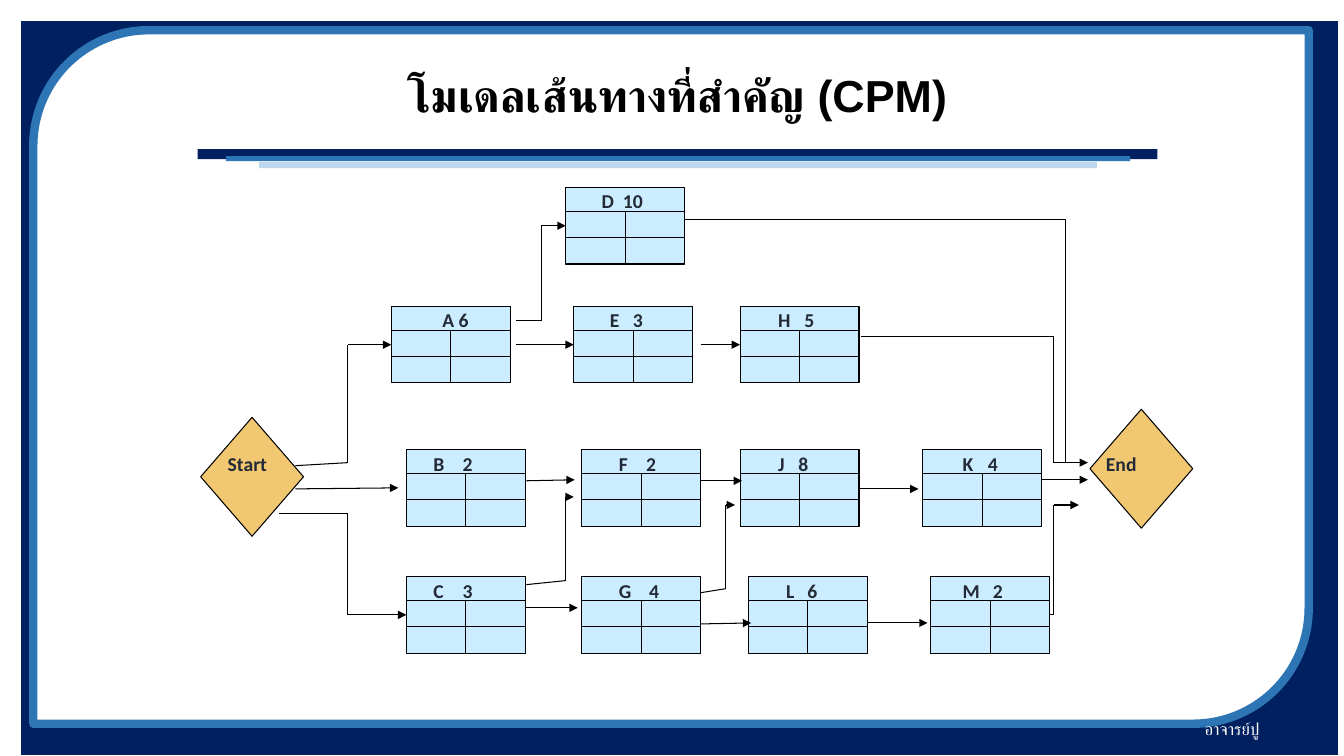
from dataclasses import dataclass
from itertools import pairwise

from lxml import etree
from pptx import Presentation
from pptx.dml.color import RGBColor
from pptx.enum.shapes import MSO_CONNECTOR, MSO_SHAPE
from pptx.enum.text import MSO_ANCHOR, MSO_AUTO_SIZE, PP_ALIGN
from pptx.oxml.ns import qn
from pptx.util import Pt

PX = 9144
RECTANGLE = MSO_SHAPE.RECTANGLE
DIAMOND = MSO_SHAPE.DIAMOND
PANEL = MSO_SHAPE.ROUND_2_DIAG_RECTANGLE
STRAIGHT = MSO_CONNECTOR.STRAIGHT
MIDDLE = MSO_ANCHOR.MIDDLE
CENTER = PP_ALIGN.CENTER
FIT_TEXT = MSO_AUTO_SIZE.SHAPE_TO_FIT_TEXT
LEFT_SIDE, BOTTOM_SIDE, RIGHT_SIDE = 1, 2, 3
TITLE_ONLY = 5
NODE_WIDTH, NODE_HEIGHT = 118, 76
HEADER_HEIGHT, ROW_LINE = 24, 50


@dataclass(frozen=True)
class Theme:
    navy: str = "002060"
    blue: str = "2E75B6"
    pale_blue: str = "BDD7EE"
    white: str = "FFFFFF"
    black: str = "000000"
    label: str = "222A35"
    node: str = "CCECFF"
    terminal: str = "F2C772"
    title_font: str = "Arial"
    body_font: str = "Calibri"
    title_size: int = 32
    label_size: int = 14
    footer_size: int = 12
    thin: float = 0.75
    frame: float = 6


THEME = Theme()


@dataclass(frozen=True)
class Box:
    left: int
    top: int
    width: int
    height: int

    def emu(self):
        return [value * PX for value in (self.left, self.top, self.width, self.height)]


@dataclass(frozen=True)
class Activity:
    name: str
    duration: int
    left: int
    top: int
    label_left: int
    duration_offset: int


@dataclass(frozen=True)
class Terminal:
    text: str
    diamond: Box
    label: Box


@dataclass(frozen=True)
class Route:
    points: tuple
    arrow: bool = True
    source: str = ""
    target: str = ""


BANDS = (
    (Box(196, 148, 952, 10), THEME.navy),
    (Box(224, 155, 897, 5), THEME.blue),
    (Box(257, 161, 831, 6), THEME.pale_blue),
)
ACTIVITIES = (
    Activity("A", 6, 388, 304, 429, 16),
    Activity("B", 2, 403, 446, 420, 29),
    Activity("C", 3, 403, 572, 420, 29),
    Activity("D", 10, 561, 186, 587, 21),
    Activity("E", 3, 569, 304, 595, 23),
    Activity("F", 2, 577, 446, 604, 27),
    Activity("G", 4, 577, 572, 604, 30),
    Activity("H", 5, 734, 304, 762, 26),
    Activity("J", 8, 734, 446, 762, 20),
    Activity("K", 4, 915, 446, 945, 25),
    Activity("L", 6, 742, 572, 770, 21),
    Activity("M", 2, 923, 572, 945, 30),
)
TERMINALS = (
    Terminal("Start", Box(199, 414, 102, 118), Box(216, 443, 75, 34)),
    Terminal("End", Box(1081, 406, 102, 118), Box(1087, 443, 61, 34)),
)
ROUTES = (
    Route(((293, 462), (345, 459), (345, 342), (388, 342)), target="A"),
    Route(((293, 485), (395, 484))),
    Route(((277, 509), (345, 509), (345, 610), (403, 610)), target="C"),
    Route(((512, 318), (537, 318), (537, 224), (561, 224)), target="D"),
    Route(((512, 342), (569, 342)), target="E"),
    Route(((522, 477), (570, 476))),
    Route(((522, 580), (561, 576), (561, 493), (569, 493))),
    Route(((522, 603), (573, 603))),
    Route(((695, 342), (734, 342)), target="H"),
    Route(((695, 477), (736, 477))),
    Route(((695, 588), (720, 584), (720, 501), (729, 501))),
    Route(((695, 619), (745, 618))),
    Route(((852, 485), (911, 485))),
    Route(((860, 618), (920, 618))),
    Route(((1033, 476), (1079, 476))),
    Route(((1041, 610), (1045, 610), (1045, 501), (1070, 501)), source="M"),
    Route(((854, 334), (1045, 334), (1045, 459), (1079, 459))),
    Route(((679, 218), (1057, 218), (1057, 459)), arrow=False),
)


def color(value: str) -> RGBColor:
    return RGBColor.from_string(value)


def add_shape(shapes, kind, box: Box, fill: str, line: str = "", width: float = THEME.thin):
    shape = shapes.add_shape(kind, *box.emu())
    shape.shadow.inherit = False
    shape.fill.solid()
    shape.fill.fore_color.rgb = color(fill)
    if line:
        shape.line.color.rgb = color(line)
        shape.line.width = Pt(width)
    else:
        shape.line.fill.background()
    return shape


def add_line(shapes, start: tuple, end: tuple, arrow: bool = False):
    connector = shapes.add_connector(STRAIGHT, *(value * PX for value in start + end))
    connector.line.color.rgb = color(THEME.black)
    connector.line.width = Pt(THEME.thin)
    if arrow:
        etree.SubElement(connector.line._get_or_add_ln(), qn("a:tailEnd"), type="triangle")
    etree.SubElement(connector._element.spPr, qn("a:effectLst"))
    return connector


def add_run(paragraph, text: str, font: str, size: int, ink: str, bold: bool = True) -> None:
    run = paragraph.add_run()
    run.text = text
    run.font.name = font
    run.font.size = Pt(size)
    run.font.bold = bold
    run.font.color.rgb = color(ink)


def add_text_box(shapes, box: Box, wrap: bool = True):
    frame = shapes.add_textbox(*box.emu()).text_frame
    frame.word_wrap = wrap
    frame.auto_size = FIT_TEXT
    return frame.paragraphs[0]


def add_activity(shapes, activity: Activity):
    left, top = activity.left, activity.top
    right, bottom, middle = left + NODE_WIDTH, top + NODE_HEIGHT, left + NODE_WIDTH // 2
    parts = shapes.add_group_shape().shapes
    box = Box(left, top, NODE_WIDTH, NODE_HEIGHT)
    rectangle = add_shape(parts, RECTANGLE, box, THEME.node, THEME.black)
    divider = add_line(parts, (middle, top + HEADER_HEIGHT), (middle, bottom))
    divider.end_connect(rectangle, BOTTOM_SIDE)
    for offset in (HEADER_HEIGHT, ROW_LINE):
        add_line(parts, (left, top + offset), (right, top + offset))
    return rectangle


def add_activity_label(shapes, activity: Activity) -> None:
    paragraph = add_text_box(shapes, Box(activity.label_left, activity.top - 3, 83, 33))
    tabs = etree.SubElement(paragraph._p.get_or_add_pPr(), qn("a:tabLst"))
    etree.SubElement(tabs, qn("a:tab"), pos=str(activity.duration_offset * PX), algn="l")
    for text in (activity.name, f"\t{activity.duration}"):
        add_run(paragraph, text, THEME.body_font, THEME.label_size, THEME.label)


def add_terminal(shapes, terminal: Terminal) -> None:
    add_shape(shapes, DIAMOND, terminal.diamond, THEME.terminal, THEME.black)
    paragraph = add_text_box(shapes, terminal.label, wrap=False)
    add_run(paragraph, terminal.text, THEME.body_font, THEME.label_size, THEME.label)


def add_route(shapes, route: Route, nodes: dict) -> None:
    segments = list(pairwise(route.points))
    last = len(segments) - 1
    for index, (start, end) in enumerate(segments):
        connector = add_line(shapes, start, end, route.arrow and index == last)
        if route.source and index == 0:
            connector.begin_connect(nodes[route.source], RIGHT_SIDE)
        if route.target and index == last:
            connector.end_connect(nodes[route.target], LEFT_SIDE)


def add_frame(shapes) -> None:
    add_shape(shapes, RECTANGLE, Box(21, 21, 1306, 728), THEME.navy)
    add_shape(shapes, PANEL, Box(33, 30, 1265, 688), THEME.white, THEME.blue, THEME.frame)
    bands = shapes.add_group_shape().shapes
    for box, fill in BANDS:
        add_shape(bands, RECTANGLE, box, fill)
    footer = add_text_box(shapes, Box(1185, 708, 127, 30))
    add_run(footer, "อาจารย์ปู", THEME.body_font, THEME.footer_size, THEME.white, False)


def place_title(shapes) -> None:
    title = shapes.title
    title.left, title.top, title.width, title.height = Box(196, 49, 952, 97).emu()
    title.text_frame.vertical_anchor = MIDDLE
    paragraph = title.text_frame.paragraphs[0]
    paragraph.alignment = CENTER
    paragraph.line_spacing = 0.9
    add_run(paragraph, "โมเดลเส้นทางที่สำคัญ (CPM)", THEME.title_font, THEME.title_size, THEME.black)
    title._element.getparent().append(title._element)


def main() -> None:
    presentation = Presentation()
    presentation.slide_width, presentation.slide_height = 1333 * PX, 750 * PX
    slide = presentation.slides.add_slide(presentation.slide_layouts[TITLE_ONLY])
    shapes = slide.shapes
    add_frame(shapes)
    place_title(shapes)
    nodes = {activity.name: add_activity(shapes, activity) for activity in ACTIVITIES}
    for terminal in TERMINALS:
        add_terminal(shapes, terminal)
    for route in ROUTES:
        add_route(shapes, route, nodes)
    for activity in ACTIVITIES:
        add_activity_label(shapes, activity)
    presentation.save("out.pptx")


if __name__ == "__main__":
    main()
